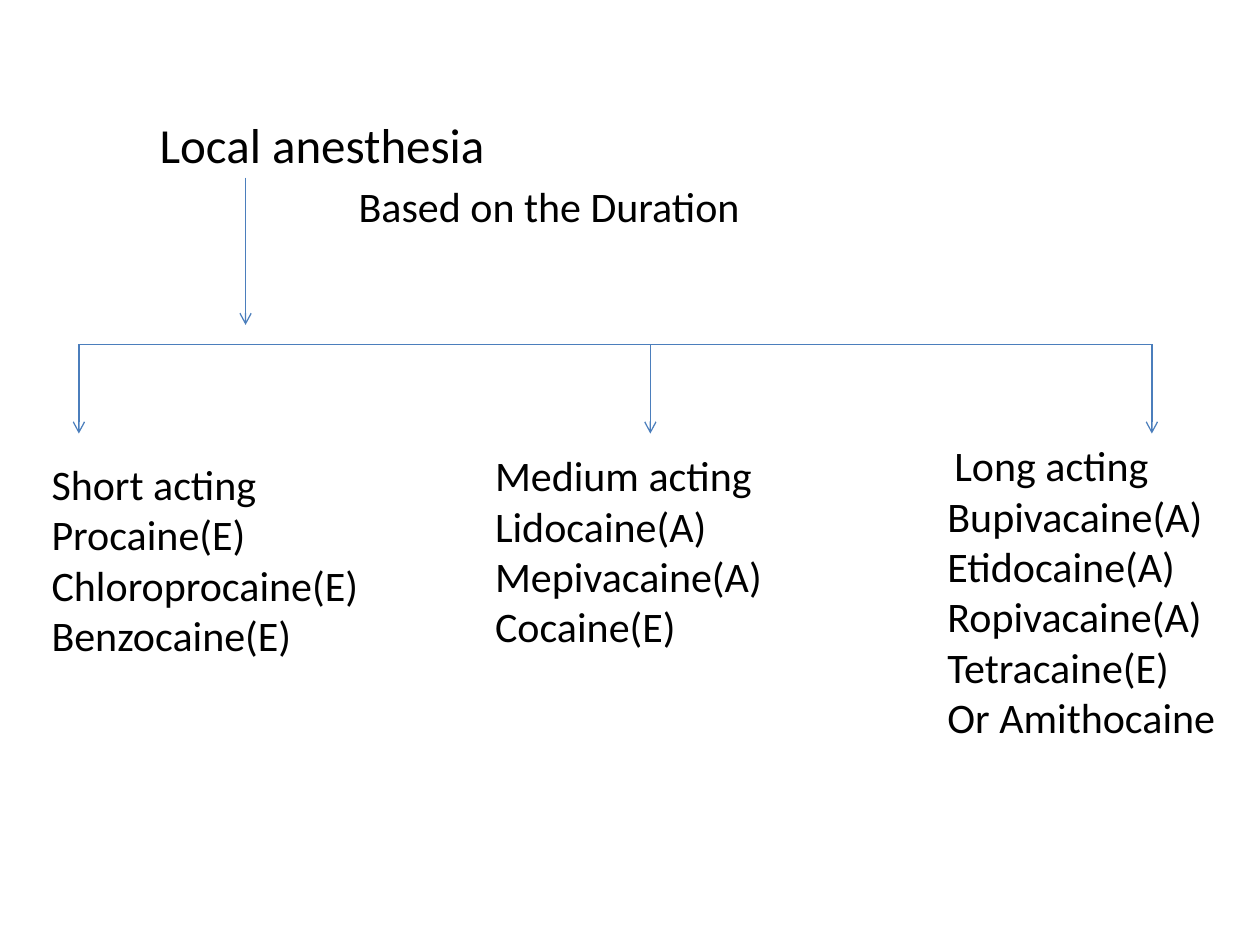
from lxml import etree
from pptx import Presentation
from pptx.dml.color import RGBColor
from pptx.enum.shapes import MSO_CONNECTOR
from pptx.oxml.ns import qn
from pptx.util import Cm, Pt

STRAIGHT = MSO_CONNECTOR.STRAIGHT
COLORS = {"text": "000000", "line": "4B7EBC"}


class DiagramSlide:
    """Hold the diagram style and draw its elements on one slide."""

    def __init__(self, slide):
        self.slide = slide
        self.font_name = "Calibri"
        self.line_width = Pt(0.75)

    def text(self, left, top, width, height, lines, sizes, indents):
        box = self.slide.shapes.add_textbox(Cm(left), Cm(top), Cm(width), Cm(height))
        frame = box.text_frame
        frame.word_wrap = True
        frame.text = "\n".join(lines)
        for index, paragraph in enumerate(frame.paragraphs):
            indent = indents.get(index)
            if indent:
                paragraph._p.get_or_add_pPr().set("indent", str(Cm(indent)))
            paragraph.font.name = self.font_name
            paragraph.font.size = Pt(sizes.get(index, 24))
            paragraph.font.color.rgb = RGBColor.from_string(COLORS["text"])
        return frame

    def line(self, start_x, start_y, end_x, end_y, arrow=False):
        connector = self.slide.shapes.add_connector(
            STRAIGHT, Cm(start_x), Cm(start_y), Cm(end_x), Cm(end_y))
        connector.line.width = self.line_width
        connector.line.color.rgb = RGBColor.from_string(COLORS["line"])
        if arrow:
            etree.SubElement(connector.line._get_or_add_ln(), qn("a:tailEnd"), type="arrow")
        etree.SubElement(connector._element.spPr, qn("a:effectLst"))


def main():
    presentation = Presentation()
    presentation.slide_width, presentation.slide_height = Cm(25.4), Cm(19.05)
    diagram = DiagramSlide(presentation.slides.add_slide(presentation.slide_layouts[6]))

    heading = diagram.text(2.97, 2.18, 18.06, 5.38,
                           ["Local anesthesia", "Based on the Duration"], {0: 28}, {1: 4.01})
    heading.paragraphs[1].space_before = Pt(4)

    branch_y, arrow_end_y = 6.94, 8.74
    branch_xs = [1.59, 13.11, 23.22]
    diagram.line(4.95, 3.58, 4.95, 6.55, arrow=True)
    diagram.line(branch_xs[-1], branch_y, branch_xs[0], branch_y)
    for branch_x in branch_xs:
        diagram.line(branch_x, branch_y, branch_x, arrow_end_y, arrow=True)

    groups = [
        (0.79, 9.12, 7.54, 4.37, {},
         ["Short acting", "Procaine(E)", "Chloroprocaine(E)", "Benzocaine(E)"]),
        (9.73, 8.94, 6.55, 4.37, {},
         ["Medium acting", "Lidocaine(A)", "Mepivacaine(A)", "Cocaine(E)"]),
        (18.85, 8.74, 6.55, 6.4, {0: 0.14},
         ["Long acting", "Bupivacaine(A)", "Etidocaine(A)", "Ropivacaine(A)",
          "Tetracaine(E)", "Or Amithocaine"]),
    ]
    for left, top, width, height, indents, lines in groups:
        diagram.text(left, top, width, height, lines, {}, indents)

    presentation.save("out.pptx")


if __name__ == "__main__":
    main()
